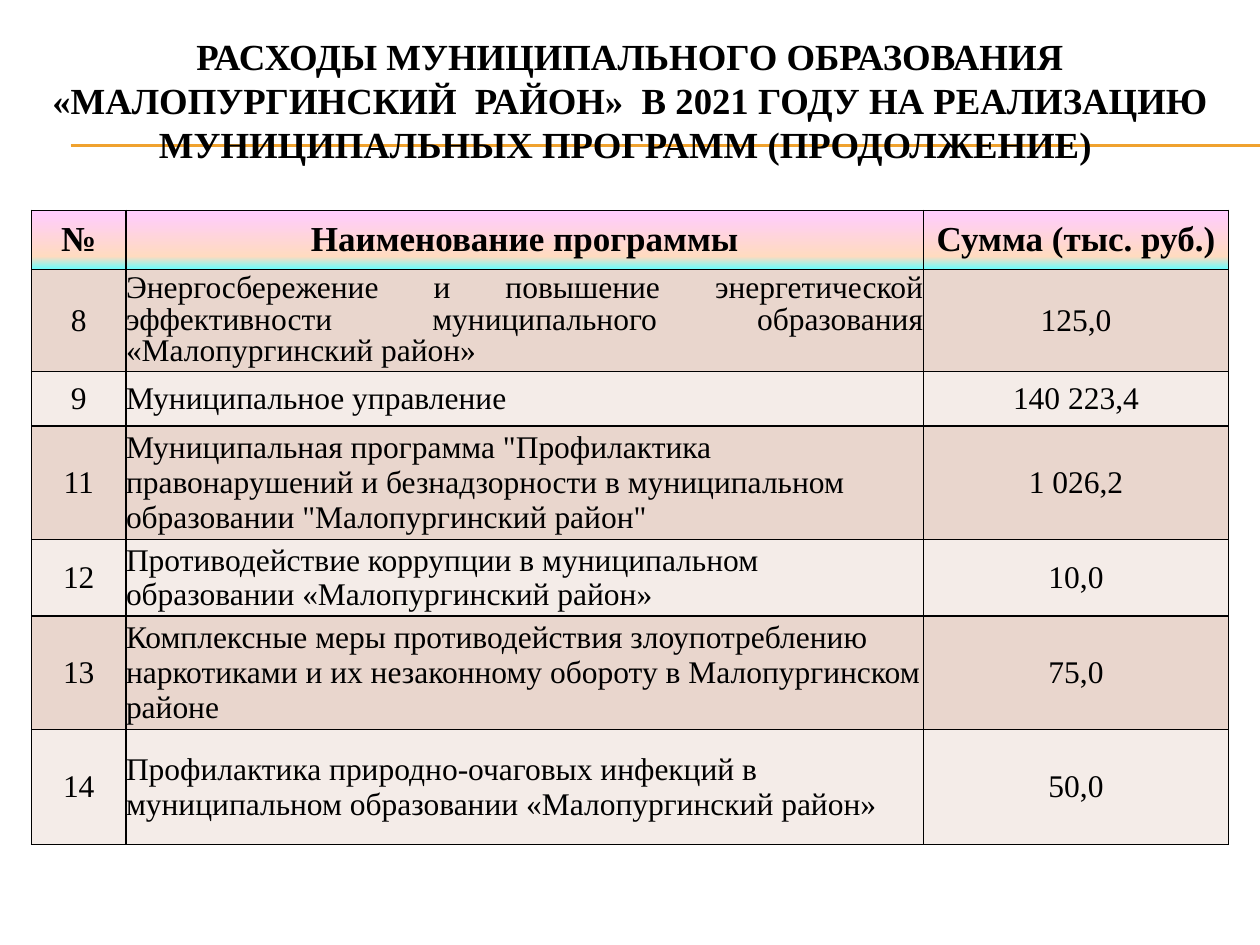
from dataclasses import dataclass

from lxml import etree
from pptx import Presentation
from pptx import util as u
from pptx.dml.color import RGBColor
from pptx.enum import shapes, text
from pptx.oxml import parse_xml
from pptx.oxml.ns import nsdecls, qn


@dataclass(frozen=True)
class Theme:
    font: str = "Times New Roman"
    ink: str = "000000"
    rule: str = "F0A22E"
    bands: tuple = ("E9D6CD", "F4ECE8")
    header_stops: tuple = ((0, "FFCCFF"), (78, "FFDBC0"), (100, "66FFFF"))
    title_size: float = 21
    header_size: float = 20
    body_size: float = 18


THEME = Theme()
WIDTH, HEIGHT = 10, 7.5
MARGIN = WIDTH / 40

TITLE = ("РАСХОДЫ МУНИЦИПАЛЬНОГО ОБРАЗОВАНИЯ «МАЛОПУРГИНСКИЙ  РАЙОН»  В 2021 ГОДУ "
         "НА РЕАЛИЗАЦИЮ МУНИЦИПАЛЬНЫХ ПРОГРАММ (ПРОДОЛЖЕНИЕ) ")
HEADERS = ("№", "Наименование программы", "Сумма (тыс. руб.)")
PROGRAMMES = [
    ("8", "Энергосбережение и повышение энергетической эффективности муниципального "
          "образования «Малопургинский район»", "125,0"),
    ("9", "Муниципальное управление", "140 223,4"),
    ("11", 'Муниципальная программа "Профилактика правонарушений и безнадзорности '
           'в муниципальном образовании "Малопургинский район"', "1 026,2"),
    ("12", "Противодействие коррупции в муниципальном образовании "
           "«Малопургинский район»", "10,0"),
    ("13", "Комплексные меры противодействия злоупотреблению наркотиками и их "
           "незаконному обороту в Малопургинском районе", "75,0"),
    ("14", "Профилактика природно-очаговых инфекций в муниципальном образовании "
           "«Малопургинский район»", "50,0"),
]
JUSTIFIED = "8"
NAME_COLUMN = 1
COLUMN_WIDTHS = (0.75, 6.33, 2.42)
ROW_HEIGHTS = (0.47, 0.75, 0.43, 0.83, 0.61, 0.83, 0.91)
TABLE_TOP = 1.67


def write(paragraph, content, size, bold, alignment):
    paragraph.alignment = alignment
    run = paragraph.add_run()
    run.text = content
    run.font.name = THEME.font
    run.font.size = u.Pt(size)
    run.font.bold = bold
    run.font.color.rgb = RGBColor.from_string(THEME.ink)


def add_rule(slide, top):
    line = slide.shapes.add_connector(
        shapes.MSO_CONNECTOR.STRAIGHT, u.Inches(0.56), u.Inches(top),
        u.Inches(WIDTH), u.Inches(top))
    line.line.color.rgb = RGBColor.from_string(THEME.rule)
    line.line.width = u.Pt(0.75)
    etree.SubElement(line._element.spPr, qn("a:effectLst"))


def add_title(slide):
    box = slide.shapes.add_textbox(u.Inches(MARGIN), u.Inches(0.25),
                                   u.Inches(WIDTH - 2 * MARGIN), u.Inches(1.08))
    frame = box.text_frame
    frame.word_wrap = True
    frame.vertical_anchor = text.MSO_ANCHOR.MIDDLE
    write(frame.paragraphs[0], TITLE, THEME.title_size, True, text.PP_ALIGN.CENTER)


def add_borders(cell):
    properties = cell._tc.get_or_add_tcPr()
    for side in ("lnL", "lnR", "lnT", "lnB"):
        properties.append(parse_xml(
            f'<a:{side} {nsdecls("a")} w="12700"><a:solidFill>'
            f'<a:srgbClr val="{THEME.ink}"/></a:solidFill></a:{side}>'))


def fill_header(cell):
    stops = "".join(f'<a:gs pos="{share * 1000}"><a:srgbClr val="{color}"/></a:gs>'
                    for share, color in THEME.header_stops)
    cell._tc.get_or_add_tcPr().append(parse_xml(
        f'<a:gradFill {nsdecls("a")} rotWithShape="1"><a:gsLst>{stops}</a:gsLst>'
        '<a:lin ang="5400000" scaled="0"/></a:gradFill>'))


def format_cell(cell, content, row, column, justified):
    header = row == 0
    cell.vertical_anchor = text.MSO_ANCHOR.MIDDLE
    add_borders(cell)
    alignment = text.PP_ALIGN.CENTER
    paragraph = cell.text_frame.paragraphs[0]
    if header:
        fill_header(cell)
    else:
        cell.fill.solid()
        cell.fill.fore_color.rgb = RGBColor.from_string(THEME.bands[(row - 1) % 2])
        if column == NAME_COLUMN:
            cell.margin_left = cell.margin_right = cell.margin_top = cell.margin_bottom = 0
            alignment = text.PP_ALIGN.JUSTIFY if justified else text.PP_ALIGN.LEFT
            if justified:
                paragraph.line_spacing = 0.9
    size = THEME.header_size if header else THEME.body_size
    write(paragraph, content, size, header, alignment)


def add_programme_table(slide):
    rows = [HEADERS, *PROGRAMMES]
    table = slide.shapes.add_table(
        len(rows), len(HEADERS), u.Inches(MARGIN), u.Inches(TABLE_TOP),
        u.Inches(sum(COLUMN_WIDTHS)), u.Inches(sum(ROW_HEIGHTS))).table
    for column, width in zip(table.columns, COLUMN_WIDTHS):
        column.width = u.Inches(width)
    for row, height in zip(table.rows, ROW_HEIGHTS):
        row.height = u.Inches(height)
    for row, values in enumerate(rows):
        for column, value in enumerate(values):
            format_cell(table.cell(row, column), value, row, column,
                        values[0] == JUSTIFIED)


def main():
    presentation = Presentation()
    presentation.slide_width = u.Inches(WIDTH)
    presentation.slide_height = u.Inches(HEIGHT)
    slide = presentation.slides.add_slide(presentation.slide_layouts[6])
    for top in (1.15, 1.16):
        add_rule(slide, top)
    add_title(slide)
    add_programme_table(slide)
    presentation.save("out.pptx")


if __name__ == "__main__":
    main()
